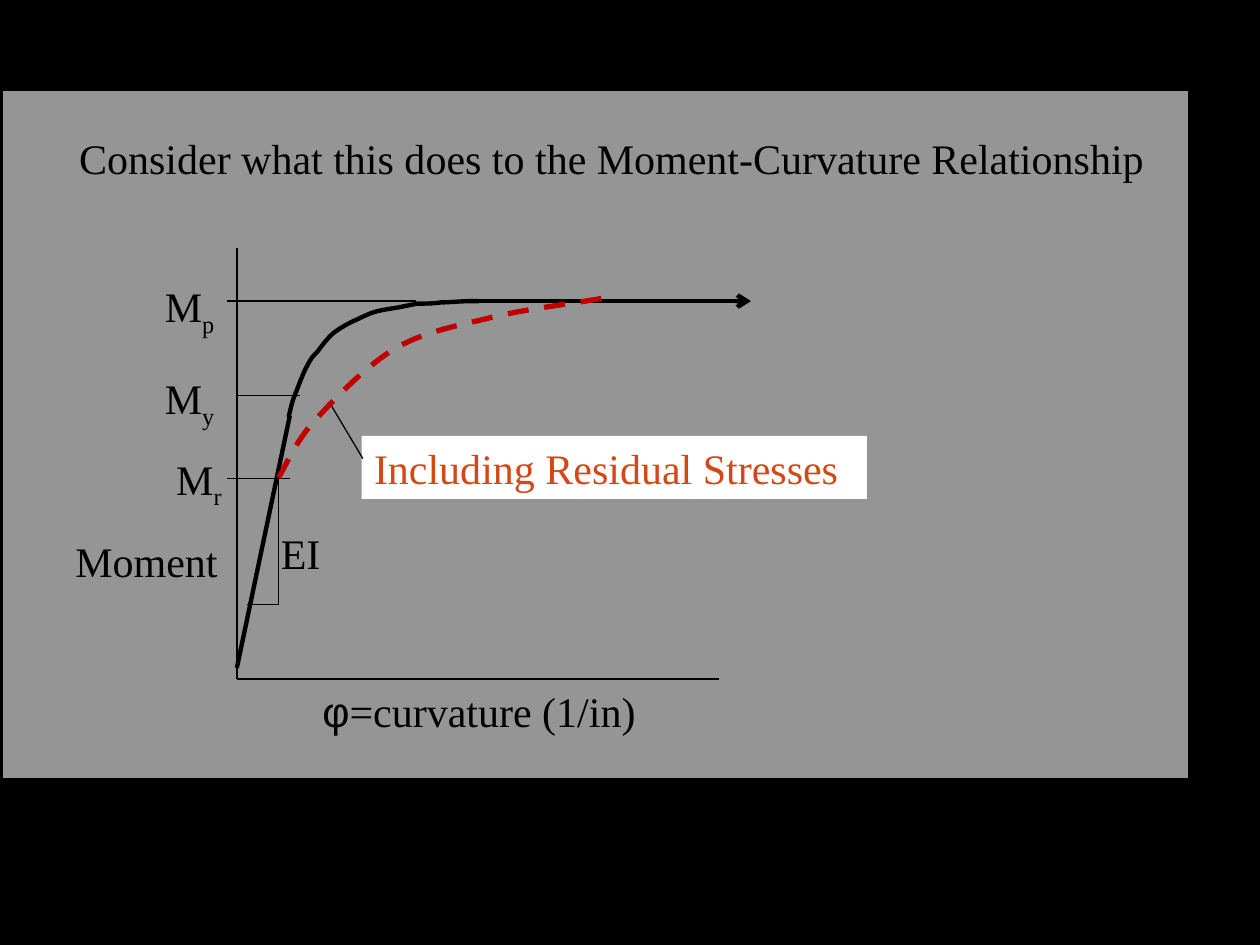
from dataclasses import dataclass
from typing import Optional

from lxml.etree import SubElement
from pptx import Presentation
from pptx.dml.color import RGBColor
from pptx.enum.dml import MSO_LINE
from pptx.enum.shapes import MSO_CONNECTOR, MSO_SHAPE
from pptx.enum.text import MSO_ANCHOR, PP_ALIGN
from pptx.oxml.ns import qn
from pptx.util import Pt

PX = 9144  # EMU per px, 100 px to the inch
COLORS = {
    "background": "000000",
    "panel": "F2F2F2",
    "ink": "000000",
    "residual": "C00000",
    "callout": "FFFFFF",
    "callout_text": "D34817",
}
SERIF = "Times New Roman"
SANS = "Arial"
THIN, THICK, HEAVY = 0.75, 2.5, 3


@dataclass
class Run:
    text: str
    font: str = SERIF
    subscript: bool = False


@dataclass
class Label:
    box: tuple[int, int, int, int]
    runs: list[Run]
    wrap: bool = True


@dataclass
class Line:
    start: tuple[int, int]
    end: tuple[int, int]
    width: float = THIN
    arrow: bool = False


@dataclass
class Curve:
    """A start point, then three points (two controls, one end) per segment."""
    points: list[tuple[int, int]]
    color: str
    width: float
    dash: Optional[MSO_LINE] = None


def rgb(name: str) -> RGBColor:
    return RGBColor.from_string(COLORS[name])


def write_text(shape, runs: list[Run], color: str, wrap: bool = True) -> None:
    text_frame = shape.text_frame
    text_frame.word_wrap = wrap
    text_frame.vertical_anchor = MSO_ANCHOR.TOP
    paragraph = text_frame.paragraphs[0]
    paragraph.alignment = PP_ALIGN.LEFT
    paragraph.text = runs[0].text
    for extra in runs[1:]:
        paragraph.add_run().text = extra.text
    for run, style in zip(paragraph.runs, runs):
        run.font.name = style.font
        run.font.size = Pt(24)
        run.font.color.rgb = rgb(color)
        if style.subscript:
            run._r.get_or_add_rPr().set("baseline", "-25000")


def draw_label(shapes, label: Label) -> None:
    box = shapes.add_textbox(*(value * PX for value in label.box))
    write_text(box, label.runs, "ink", label.wrap)


def draw_rectangle(shapes, box: tuple[int, int, int, int], color: str):
    rectangle = shapes.add_shape(MSO_SHAPE.RECTANGLE, *(value * PX for value in box))
    rectangle.shadow.inherit = False
    rectangle.fill.solid()
    rectangle.fill.fore_color.rgb = rgb(color)
    rectangle.line.fill.background()
    return rectangle


def draw_line(shapes, line: Line) -> None:
    ends = (value * PX for value in line.start + line.end)
    connector = shapes.add_connector(MSO_CONNECTOR.STRAIGHT, *ends)
    connector.line.color.rgb = rgb("ink")
    connector.line.width = Pt(line.width)
    if line.arrow:
        SubElement(connector.get_or_add_ln(), qn("a:tailEnd"), type="arrow")
    SubElement(connector._element.spPr, qn("a:effectLst"))


def draw_curve(shapes, curve: Curve) -> None:
    builder = shapes.build_freeform(*curve.points[0], scale=float(PX))
    builder.add_line_segments(curve.points[1:], close=False)
    shape = builder.convert_to_shape()
    shape.shadow.inherit = False
    shape.fill.background()
    shape.line.color.rgb = rgb(curve.color)
    shape.line.width = Pt(curve.width)
    if curve.dash is not None:
        shape.line.dash_style = curve.dash
    # Turn every three straight segments into one Bezier segment
    path = next(shape._element.iter(qn("a:path")))
    segments = path.findall(qn("a:lnTo"))
    for first in range(0, len(segments), 3):
        bezier = SubElement(path, qn("a:cubicBezTo"))
        for segment in segments[first:first + 3]:
            bezier.append(segment[0])
            path.remove(segment)


def moment_label(box: tuple[int, int, int, int], subscript: str) -> Label:
    return Label(box, [Run("M"), Run(subscript, subscript=True)])


LINES = [
    Line((188, 530), (230, 330), THICK),  # elastic part
    Line((380, 239), (596, 239), THICK, arrow=True),  # plastic plateau
    Line((188, 197), (188, 539)),  # moment axis
    Line((188, 539), (571, 539)),  # curvature axis
    Line((180, 239), (330, 239)),  # plastic moment level
    Line((188, 314), (238, 314)),  # yield moment level
    Line((196, 480), (221, 480)),  # slope triangle
    Line((221, 480), (221, 364)),
]
LABELS = [
    Label((53, 100, 873, 51),
          [Run("Consider what this does to the Moment-Curvature Relationship")], wrap=False),
    Label((50, 420, 134, 51), [Run("Moment")], wrap=False),
    moment_label((121, 218, 79, 51), "p"),
    moment_label((121, 291, 71, 50), "y"),
    Label((213, 414, 58, 50), [Run("EI")]),
    Label((246, 539, 275, 50), [Run("φ", SANS), Run("=curvature (1/in)")]),
]
YIELD_CURVE = Curve([
    (229, 331), (230, 327), (231, 323), (232, 319), (233, 316), (233, 316), (235, 311),
    (237, 306), (241, 295), (244, 290), (247, 284), (248, 283), (252, 279),
    (255, 275), (260, 268), (265, 264), (269, 261), (274, 258), (280, 255),
    (285, 253), (290, 250), (296, 248), (302, 246), (310, 245), (316, 244),
    (321, 243), (326, 242), (331, 241), (337, 241), (343, 241), (350, 240),
    (356, 240), (367, 239), (372, 239), (377, 239), (378, 239), (380, 239),
], "ink", THICK)
RESIDUAL_CURVE = Curve([
    (221, 379), (226, 372), (233, 353), (248, 336), (263, 319), (290, 291), (313, 277),
    (337, 263), (362, 259), (390, 252), (418, 245), (463, 240), (482, 236),
], "residual", HEAVY, MSO_LINE.DASH)


def main() -> None:
    presentation = Presentation()
    presentation.slide_width = 1000 * PX
    presentation.slide_height = 750 * PX
    slide = presentation.slides.add_slide(presentation.slide_layouts[6])
    slide.background.fill.solid()
    slide.background.fill.fore_color.rgb = rgb("background")

    # Translucent panel
    panel = draw_rectangle(slide.shapes, (0, 70, 945, 550), "panel")
    fill_color = next(panel._element.spPr.iter(qn("a:srgbClr")))
    SubElement(fill_color, qn("a:alpha"), val="62000")
    panel.line.color.rgb = rgb("ink")
    panel.line.width = Pt(HEAVY)

    # Axes, levels and labels
    for line in LINES:
        draw_line(slide.shapes, line)
    for label in LABELS:
        draw_label(slide.shapes, label)

    # Residual stress curve with its callout
    group = slide.shapes.add_group_shape().shapes
    draw_label(group, moment_label((130, 355, 58, 50), "r"))
    draw_line(group, Line((180, 380), (230, 380)))
    draw_curve(group, RESIDUAL_CURVE)
    callout = draw_rectangle(group, (287, 346, 401, 50), "callout")
    write_text(callout, [Run("Including Residual Stresses")], "callout_text")
    draw_line(group, Line((288, 364), (263, 322)))

    # Curve from yield to plastic moment
    draw_curve(slide.shapes, YIELD_CURVE)
    presentation.save("out.pptx")


if __name__ == "__main__":
    main()
